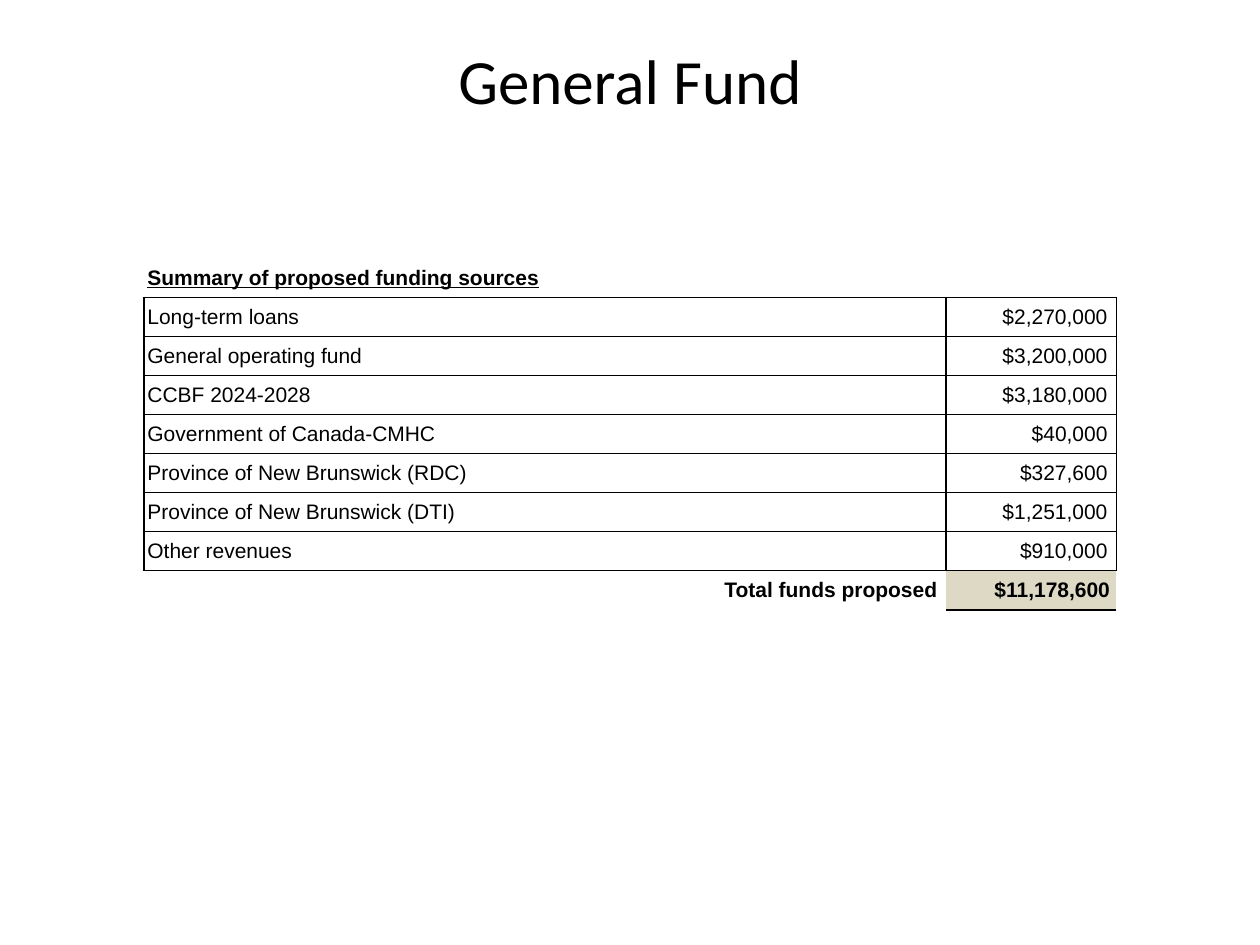
from lxml import etree
from pptx import Presentation
from pptx import util as u
from pptx.dml.color import RGBColor
from pptx.enum import text
from pptx.oxml import ns

BLACK = RGBColor(0x00, 0x00, 0x00)
BEIGE = RGBColor(0xDD, 0xD9, 0xC4)
PLAIN_STYLE = "{2D5ABB26-0587-4C30-8999-92F81FD0307C}"
LEFT, RIGHT = text.PP_ALIGN.LEFT, text.PP_ALIGN.RIGHT

HEADING = "Summary of proposed funding sources"
SOURCES = [
    ("Long-term loans", "$2,270,000"),
    ("General operating fund", "$3,200,000"),
    ("CCBF 2024-2028", "$3,180,000"),
    ("Government of Canada-CMHC", "$40,000"),
    ("Province of New Brunswick (RDC)", "$327,600"),
    ("Province of New Brunswick (DTI)", "$1,251,000"),
    ("Other revenues", "$910,000"),
]
TOTAL = ("Total funds proposed", "$11,178,600")


def write(frame, content, size=12, font="Arial", bold=False, underline=False,
          align=LEFT, spacing=None):
    """Write one formatted paragraph into a text frame."""
    paragraph = frame.paragraphs[0]
    paragraph.alignment = align
    paragraph.line_spacing = spacing
    if content:
        run = paragraph.add_run()
        run.text = content
        run.font.name, run.font.size = font, u.Pt(size)
        run.font.bold, run.font.underline = bold, underline
        run.font.color.rgb = BLACK


class FundSlide:
    """Hold the slide and draw its elements in one style."""

    def __init__(self, presentation):
        self.slide = presentation.slides.add_slide(presentation.slide_layouts[5])

    def title(self, content):
        """Fill and place the title placeholder."""
        shape = self.slide.shapes.title
        shape.left, shape.top = u.Inches(0.5), u.Inches(0.22)
        shape.width, shape.height = u.Inches(9), u.Inches(0.82)
        shape.text_frame.vertical_anchor = text.MSO_ANCHOR.MIDDLE
        write(shape.text_frame, content, size=36, font="Calibri",
              align=text.PP_ALIGN.CENTER)

    def borders(self, cell, **widths):
        """Draw the given sides of a cell, with widths in points."""
        properties = cell._tc.get_or_add_tcPr()
        sides = [side for side in "LRTB" if side in widths]
        for index, side in enumerate(sides):
            line = etree.Element(ns.qn(f"a:ln{side}"), w=str(u.Pt(widths[side])))
            fill = etree.SubElement(line, ns.qn("a:solidFill"))
            etree.SubElement(fill, ns.qn("a:srgbClr"), val=str(BLACK))
            properties.insert(index, line)

    def cell(self, cell, content, fill=None, right=0.07, sides=None, **style):
        """Format one table cell and its text."""
        cell.margin_left, cell.margin_right = u.Inches(0.03), u.Inches(right)
        cell.margin_top = cell.margin_bottom = 0
        cell.vertical_anchor = text.MSO_ANCHOR.MIDDLE
        if fill is None:
            cell.fill.background()
        else:
            cell.fill.solid()
            cell.fill.fore_color.rgb = fill
        write(cell.text_frame, content, spacing=u.Pt(13.8), **style)
        self.borders(cell, **(sides or {}))

    def table(self, heading, sources, total):
        """Draw the heading row, the funding sources and the total."""
        count = len(sources) + 2
        row_height = u.Inches(0.31)
        table = self.slide.shapes.add_table(
            count, 2, u.Inches(1.14), u.Inches(2.05), u.Inches(7.72),
            row_height * count).table
        table.first_row = table.horz_banding = False
        table._tbl.tblPr.find(ns.qn("a:tableStyleId")).text = PLAIN_STYLE
        for column, width in zip(table.columns, (6.37, 1.35)):
            column.width = u.Inches(width)
        for row in table.rows:
            row.height = row_height

        self.cell(table.cell(0, 0), heading, bold=True, underline=True,
                  sides={"B": 1})
        self.cell(table.cell(0, 1), "", sides={"B": 1})
        for index, (name, amount) in enumerate(sources, start=1):
            self.cell(table.cell(index, 0), name,
                      sides={"L": 1.5, "R": 1, "T": 1, "B": 1})
            self.cell(table.cell(index, 1), amount, align=RIGHT,
                      sides={"L": 1, "R": 1, "T": 1, "B": 1})
        label, amount = total
        self.cell(table.cell(count - 1, 0), label, bold=True, align=RIGHT,
                  sides={"T": 1})
        self.cell(table.cell(count - 1, 1), amount, bold=True, align=RIGHT,
                  fill=BEIGE, right=0.05, sides={"T": 1, "B": 1.5})


def main():
    """Build and save the presentation."""
    presentation = Presentation()
    presentation.slide_width, presentation.slide_height = u.Inches(10), u.Inches(7.5)
    fund_slide = FundSlide(presentation)
    fund_slide.title("General Fund")
    fund_slide.table(HEADING, SOURCES, TOTAL)
    presentation.save("out.pptx")


if __name__ == "__main__":
    main()
